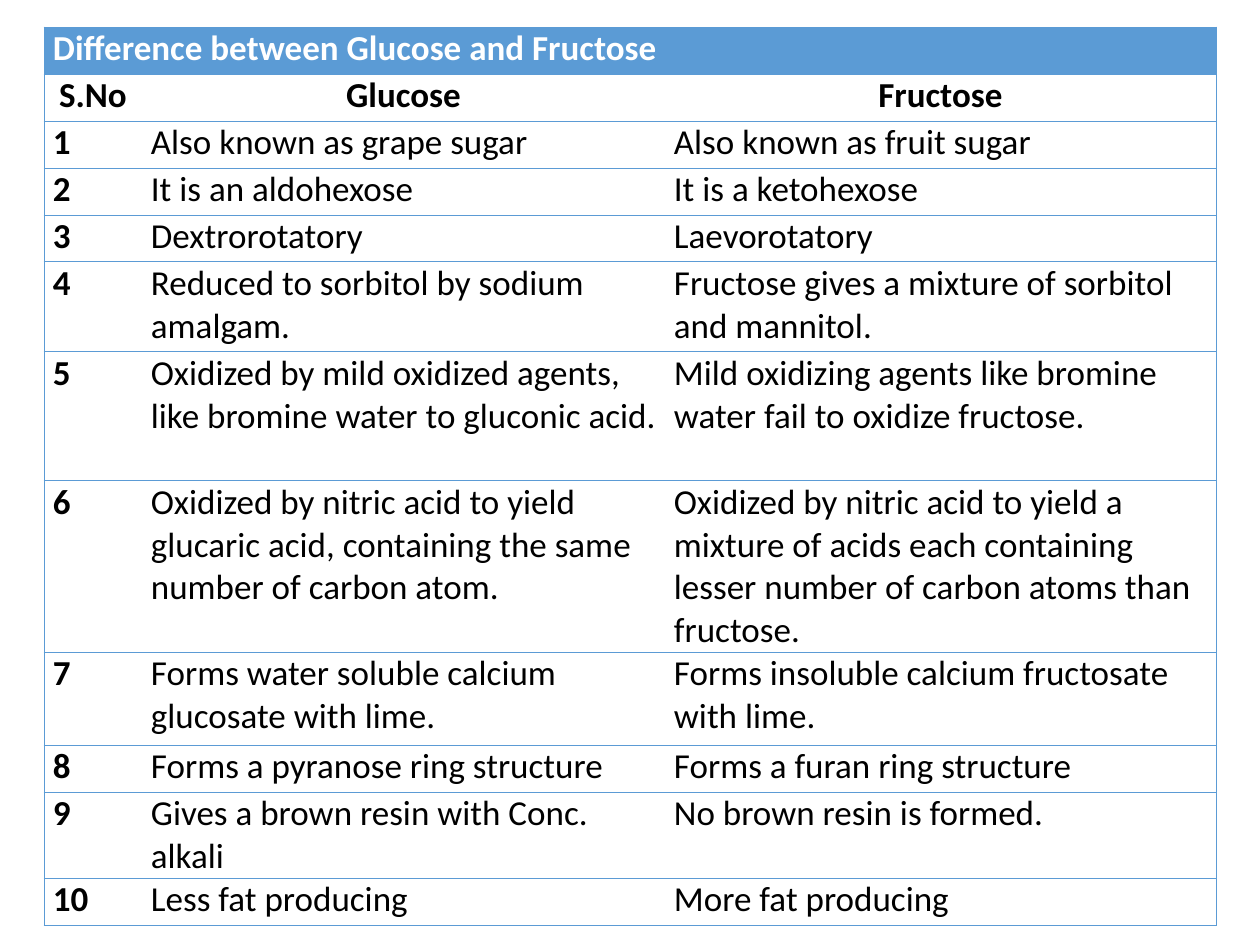
"""Build a slide with a table comparing glucose and fructose."""
from pptx import Presentation
from pptx.dml.color import RGBColor
from pptx.enum.text import PP_ALIGN as Align
from pptx.oxml.ns import qn
from pptx.util import Emu, Pt
from lxml.etree import SubElement

BLUE = RGBColor(0x5B, 0x9B, 0xD5)
WHITE = RGBColor(0xFF, 0xFF, 0xFF)
BLACK = RGBColor(0x00, 0x00, 0x00)

TITLE = "Difference between Glucose and Fructose"
HEADS = ("S.No", "Glucose", "Fructose")
FACTS = [
    ("Also known as grape sugar", "Also known as fruit sugar"),
    ("It is an aldohexose", "It is a ketohexose"),
    ("Dextrorotatory", "Laevorotatory"),
    ("Reduced to sorbitol by sodium amalgam.",
     "Fructose gives a mixture of sorbitol and mannitol."),
    ("Oxidized by mild oxidized agents, like bromine water to gluconic acid.",
     "Mild oxidizing agents like bromine water fail to oxidize fructose."),
    ("Oxidized by nitric acid to yield glucaric acid, containing the same number of carbon atom.",
     "Oxidized by nitric acid to yield a mixture of acids each containing "
     "lesser number of carbon atoms than fructose."),
    ("Forms water soluble calcium glucosate with lime.",
     "Forms insoluble calcium fructosate with lime."),
    ("Forms a pyranose ring structure", "Forms a furan ring structure"),
    ("Gives a brown resin with Conc. alkali", "No brown resin is formed."),
    ("Less fat producing", "More fat producing"),
]
COLS = (98, 523, 551)
ROWS = (47, 47, 47, 47, 47, 90, 129, 171, 93, 47, 86, 47)


def px(n):
    return Emu(round(n * 914400 / 126))


def add_border(cell, side, visible):
    ln = SubElement(cell._tc.get_or_add_tcPr(), qn(f"a:ln{side}"), w=str(Pt(0.5)))
    if visible:
        fill = SubElement(ln, qn("a:solidFill"))
        SubElement(fill, qn("a:srgbClr"), val=str(BLUE))
    else:
        SubElement(ln, qn("a:noFill"))


prs = Presentation()
prs.slide_width, prs.slide_height = px(1260), px(945)
s = prs.slides.add_slide(prs.slide_layouts[6])

table = s.shapes.add_table(len(ROWS), len(COLS), px(44), px(27),
                           px(sum(COLS)), px(sum(ROWS))).table
table.horz_banding = False
for col, width in zip(table.columns, COLS):
    col.width = px(width)
for row, height in zip(table.rows, ROWS):
    row.height = px(height)
table.cell(0, 0).merge(table.cell(0, 2))

content = [(TITLE, "", ""), HEADS]
content += [(str(n), *pair) for n, pair in enumerate(FACTS, 1)]
for i, texts in enumerate(content):
    for j, text in enumerate(texts):
        cell = table.cell(i, j)
        margins = {"margin_left": px(9), "margin_right": px(9),
                   "margin_top": 0, "margin_bottom": 0}
        for name, value in margins.items():
            setattr(cell, name, value)
        edges = {"L": i == 0 or j == 0, "R": i == 0 or j == 2, "T": True, "B": True}
        for side, visible in edges.items():
            add_border(cell, side, visible)
        if i == 0:
            cell.fill.solid()
            cell.fill.fore_color.rgb = BLUE
        else:
            cell.fill.background()
        p = cell.text_frame.paragraphs[0]
        p.alignment = Align.CENTER if i == 1 else Align.LEFT
        if text:
            r = p.add_run()
            r.text = text
            font = {"name": "Calibri", "size": Pt(20), "bold": i < 2 or j == 0}
            for name, value in font.items():
                setattr(r.font, name, value)
            r.font.color.rgb = WHITE if i == 0 else BLACK

prs.save("out.pptx")
